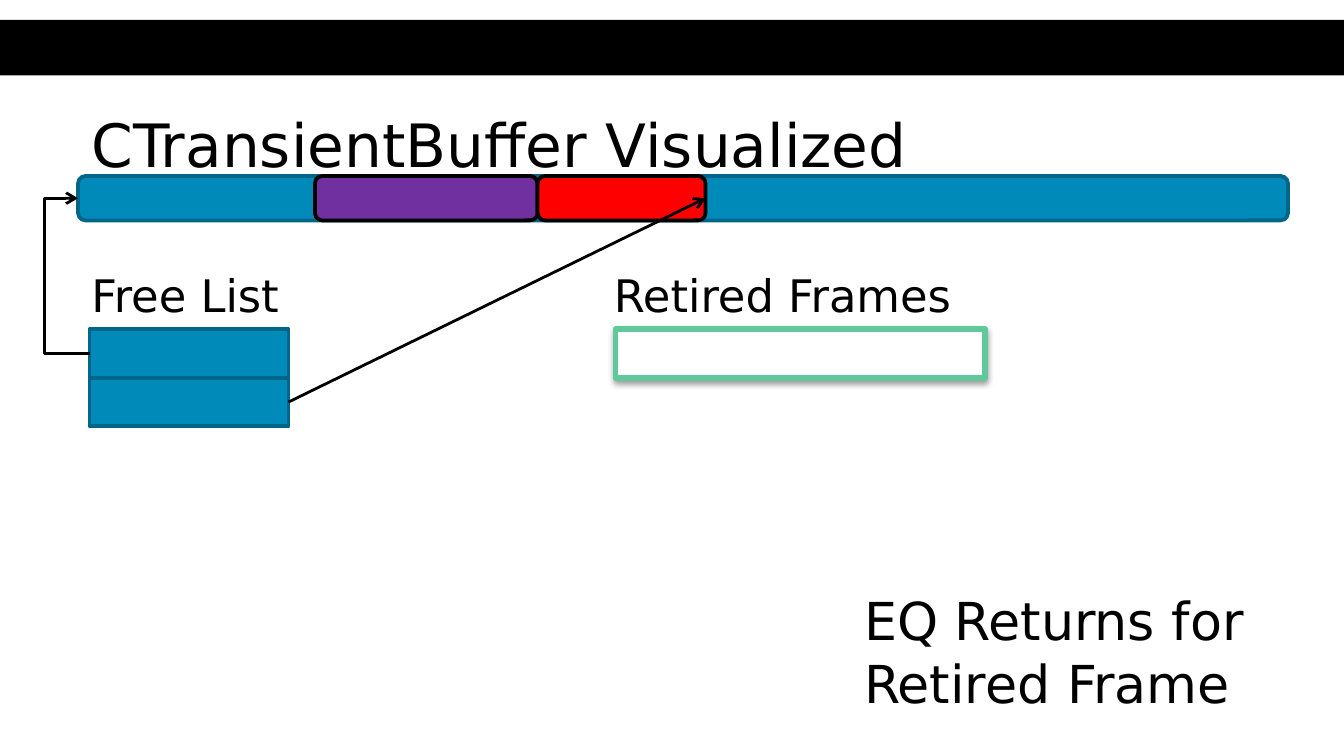
"""Build the slide that shows the transient buffer after a frame is retired."""
from lxml import etree
from pptx import Presentation
from pptx.dml.color import RGBColor
from pptx.enum import shapes, text
from pptx.oxml import ns
from pptx.util import Pt

COLORS = {"black": "000000", "white": "FFFFFF", "blue": "008AB9", "navy": "006689",
          "purple": "7030A0", "red": "FF0000", "green": "60C99C"}
FONT = "DejaVu Sans"
BAR_TOP, BAR_HEIGHT = 94.3, 23.8
BAR_MIDDLE = BAR_TOP + BAR_HEIGHT / 2
BAR_LEFT, RED_RIGHT = 41.8, 378
LIST_LEFT, LIST_TOP, LIST_WIDTH, ROW_HEIGHT = 48, 176.4, 106.6, 26
LOOP_LEFT = 23.8


def rgb(name):
    return RGBColor.from_string(COLORS[name])


def write(shape, wording, size, **frame_format):
    frame = shape.text_frame
    for key, value in frame_format.items():
        setattr(frame, key, value)
    frame.text = wording
    paragraph = frame.paragraphs[0]
    paragraph.alignment = text.PP_ALIGN.LEFT
    for run in paragraph.runs:
        for key, value in {"name": FONT, "size": Pt(size)}.items():
            setattr(run.font, key, value)
        run.font.color.rgb = rgb("black")


def add_label(slide, wording, box, size):
    label = slide.shapes.add_textbox(*map(Pt, box))
    write(label, wording, size, word_wrap=False,
          auto_size=text.MSO_AUTO_SIZE.SHAPE_TO_FIT_TEXT)


def add_block(slide, box, fill, outline=None, width=2, rounded=False):
    kind = shapes.MSO_SHAPE.ROUNDED_RECTANGLE if rounded else shapes.MSO_SHAPE.RECTANGLE
    block = slide.shapes.add_shape(kind, *map(Pt, box))
    block.shadow.inherit = False
    block.fill.solid()
    block.fill.fore_color.rgb = rgb(fill)
    if outline:
        block.line.color.rgb = rgb(outline)
        block.line.width = Pt(width)
    else:
        block.line.fill.background()
    return block


def add_shadow(block):
    effects = block._element.spPr.find(ns.qn("a:effectLst"))
    outer = etree.SubElement(effects, ns.qn("a:outerShdw"), blurRad=str(Pt(3.1)),
                             dist=str(Pt(1.6)), dir="5400000", rotWithShape="0")
    color = etree.SubElement(outer, ns.qn("a:srgbClr"), val=COLORS["black"])
    etree.SubElement(color, ns.qn("a:alpha"), val="38000")


def add_arrow(slide, start, end, bend=None):
    kind = shapes.MSO_CONNECTOR.STRAIGHT if bend is None else shapes.MSO_CONNECTOR.ELBOW
    arrow = slide.shapes.add_connector(kind, *map(Pt, start + end))
    arrow.line.color.rgb = rgb("black")
    arrow.line.width = Pt(1.5)
    properties = arrow._element.spPr
    etree.SubElement(arrow.line._get_or_add_ln(), ns.qn("a:tailEnd"), type="arrow")
    etree.SubElement(properties, ns.qn("a:effectLst"))
    if bend is not None:
        guides = properties.prstGeom.get_or_add_avLst()
        share = round(100000 * (bend - start[0]) / (end[0] - start[0]))
        etree.SubElement(guides, ns.qn("a:gd"), name="adj1", fmla=f"val {share}")


def add_title(slide, wording, box):
    title = slide.shapes.title
    for key, value in zip(("left", "top", "width", "height"), box):
        setattr(title, key, Pt(value))
    write(title, wording, 32, vertical_anchor=text.MSO_ANCHOR.MIDDLE)


def main():
    deck = Presentation()
    deck.slide_width, deck.slide_height = Pt(720), Pt(405)
    slide = deck.slides.add_slide(deck.slide_layouts[5])

    add_block(slide, (0, 10.6, 720, 29.8), "black")
    add_title(slide, "CTransientBuffer Visualized", (41.8, 52.6, 635.8, 48.2))

    for left, right, fill, outline in ((BAR_LEFT, 690, "blue", "navy"),
                                       (168.7, 288, "purple", "black"),
                                       (288, RED_RIGHT, "red", "black")):
        add_block(slide, (left, BAR_TOP, right - left, BAR_HEIGHT), fill, outline,
                  rounded=True)

    for wording, box, size in (("Free List", (41.8, 139.7, 118.8, 36), 24),
                               ("Retired Frames", (321.8, 139.7, 198.7, 36), 24),
                               ("EQ Returns for \vRetired Frame",
                                (455.8, 311.8, 233.3, 74.9), 28)):
        add_label(slide, wording, box, size)

    for row in range(2):
        add_block(slide, (LIST_LEFT, LIST_TOP + row * ROW_HEIGHT, LIST_WIDTH, ROW_HEIGHT),
                  "blue", "navy")
    add_shadow(add_block(slide, (329.8, LIST_TOP, 198, ROW_HEIGHT), "white", "green", 3))

    add_arrow(slide, (LIST_LEFT + LIST_WIDTH, LIST_TOP + 1.5 * ROW_HEIGHT),
              (RED_RIGHT, BAR_MIDDLE))
    add_arrow(slide, (LIST_LEFT, LIST_TOP + 0.5 * ROW_HEIGHT), (BAR_LEFT, BAR_MIDDLE),
              LOOP_LEFT)
    deck.save("out.pptx")


if __name__ == "__main__":
    main()
